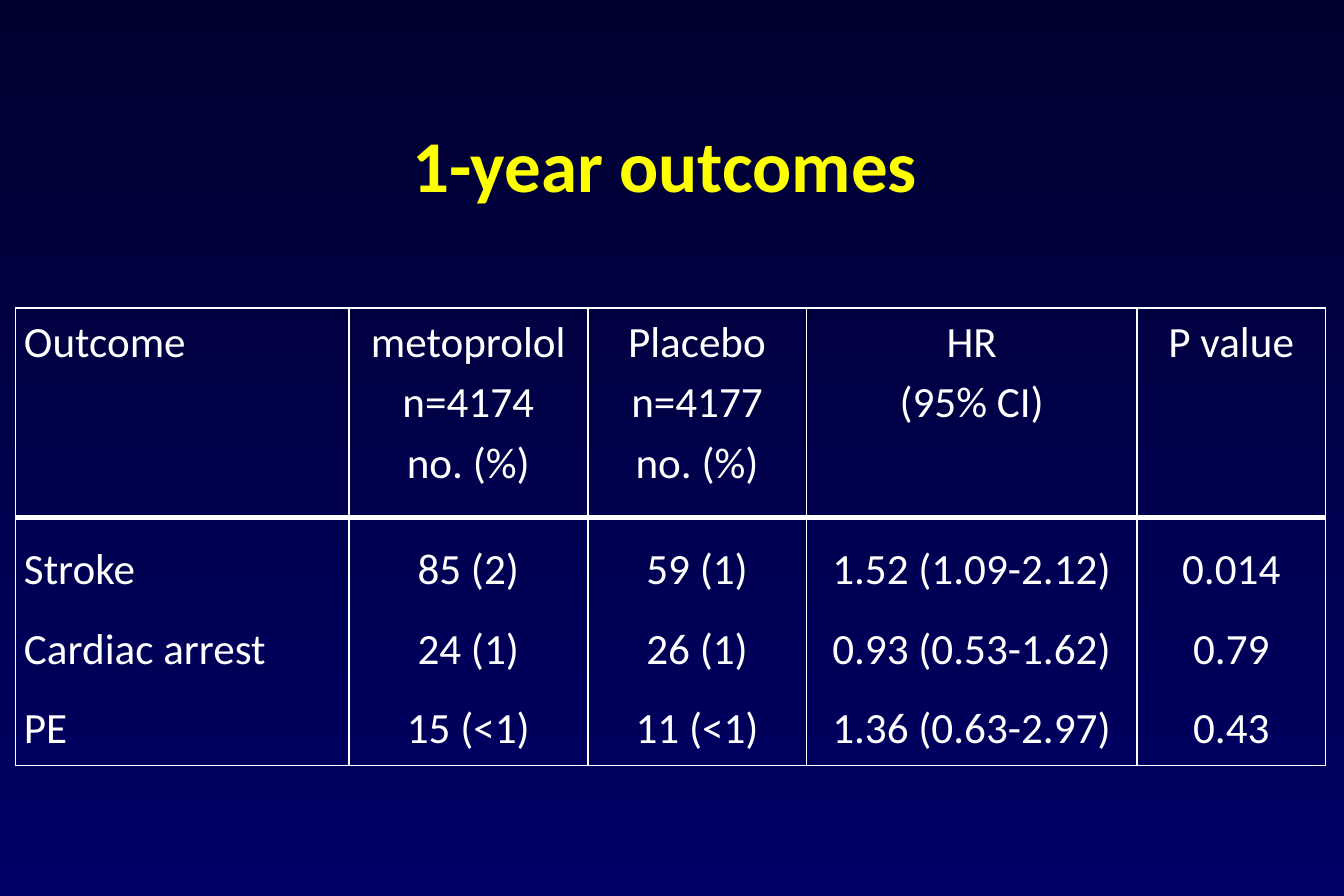
"""Build a slide with a table of one-year outcomes, metoprolol against placebo."""
from lxml import etree
from pptx import Presentation
from pptx.dml.color import RGBColor
from pptx.enum.text import MSO_ANCHOR, PP_ALIGN
from pptx.oxml.ns import qn
from pptx.util import Cm, Pt

LEFT, CENTER = PP_ALIGN.LEFT, PP_ALIGN.CENTER
MIDDLE = MSO_ANCHOR.MIDDLE
WHITE, YELLOW = "FFFFFF", "FFFF00"
GRADIENT = ["00002F", "000066"]
COLUMN_WIDTHS = [7.09, 5.08, 4.65, 7.03, 4.01]
ROW_HEIGHTS = [4.45, 5.28]
LINE_SPACINGS = [1.15, 1.5]
BORDERS = [
    {"lnL": 1, "lnR": 1, "lnT": 1, "lnB": 3},
    {"lnL": 1, "lnR": 1, "lnT": 3, "lnB": 1},
]
CELL_FORMAT = {
    "margin_left": Cm(0.18),
    "margin_right": Cm(0.18),
    "margin_top": 0,
    "margin_bottom": 0,
}
OUTCOMES = [
    [
        ["Outcome"],
        ["metoprolol", "n=4174", "no. (%)"],
        ["Placebo", "n=4177", "no. (%)"],
        ["HR", "(95% CI)"],
        ["P value"],
    ],
    [
        ["Stroke", "Cardiac arrest", "PE"],
        ["85 (2)", "24 (1)", "15 (<1)"],
        ["59 (1)", "26 (1)", "11 (<1)"],
        ["1.52 (1.09-2.12)", "0.93 (0.53-1.62)", "1.36 (0.63-2.97)"],
        ["0.014", "0.79", "0.43"],
    ],
]


def color(value):
    return RGBColor.from_string(value)


def write_paragraph(paragraph, text, size, text_color, alignment, bold=False):
    paragraph.alignment = alignment
    run = paragraph.add_run()
    run.text = text
    font_format = {"name": "Calibri", "size": Pt(size), "bold": bold}
    for name, value in font_format.items():
        setattr(run.font, name, value)
    run.font.color.rgb = color(text_color)


presentation = Presentation()
presentation.slide_width = Cm(28.58)
presentation.slide_height = Cm(19.05)
slide = presentation.slides.add_slide(presentation.slide_layouts[5])

background = slide.background.fill
background.gradient()
background.gradient_angle = 270
for stop, stop_color in zip(background.gradient_stops, GRADIENT):
    stop.color.rgb = color(stop_color)

title = slide.shapes.title
title_format = {"left": Cm(2), "top": Cm(2.1), "width": Cm(24.28), "height": Cm(2.75)}
for name, value in title_format.items():
    setattr(title, name, value)
title.text_frame.vertical_anchor = MIDDLE
write_paragraph(title.text_frame.paragraphs[0], "1-year outcomes", 44, YELLOW, CENTER, True)

table = slide.shapes.add_table(
    len(ROW_HEIGHTS), len(COLUMN_WIDTHS), Cm(0.33), Cm(6.55),
    Cm(sum(COLUMN_WIDTHS)), Cm(sum(ROW_HEIGHTS)),
).table
table.first_row = False
table.horz_banding = False
for column, width in zip(table.columns, COLUMN_WIDTHS):
    column.width = Cm(width)

for row_index, row_texts in enumerate(OUTCOMES):
    table.rows[row_index].height = Cm(ROW_HEIGHTS[row_index])
    for column_index, lines in enumerate(row_texts):
        cell = table.cell(row_index, column_index)
        for name, value in CELL_FORMAT.items():
            setattr(cell, name, value)

        properties = cell._tc.get_or_add_tcPr()
        for side, width in BORDERS[row_index].items():
            border = etree.SubElement(properties, qn(f"a:{side}"), w=str(Pt(width)))
            border_fill = etree.SubElement(border, qn("a:solidFill"))
            etree.SubElement(border_fill, qn("a:srgbClr"), val=WHITE)
        cell.fill.background()

        text_frame = cell.text_frame
        for line_index, line in enumerate(lines):
            paragraph = text_frame.add_paragraph() if line_index else text_frame.paragraphs[0]
            paragraph.line_spacing = LINE_SPACINGS[row_index]
            write_paragraph(paragraph, line, 26, WHITE, CENTER if column_index else LEFT)

presentation.save("out.pptx")
